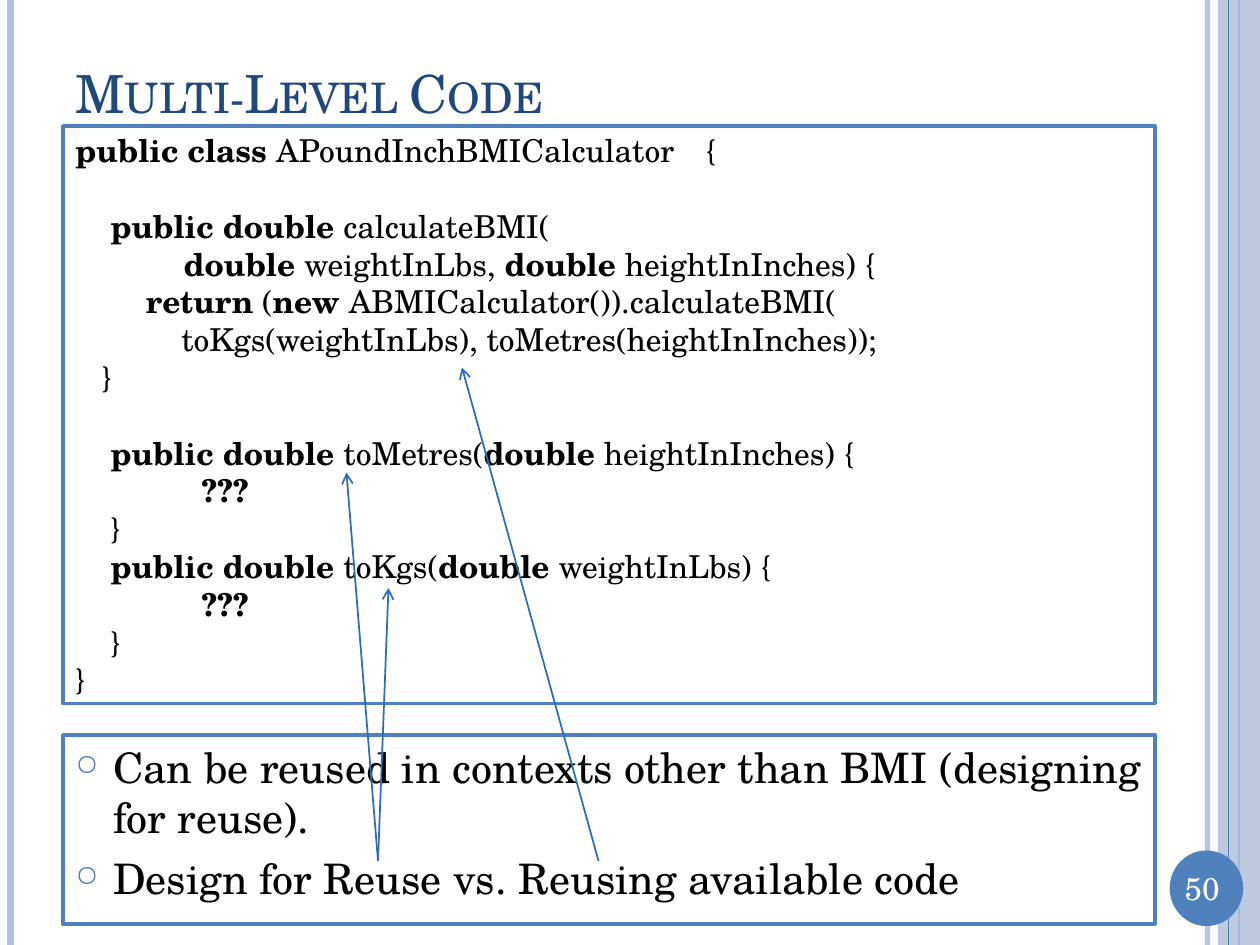
import pptx
import pptx.dml.color
import pptx.enum.shapes
import pptx.enum.text
import pptx.oxml
import pptx.oxml.ns
import pptx.util

COLORS = {
    "white": "FFFFFF", "black": "000000", "title": "1F497D",
    "accent": "4F81BD", "pale": "B3C1DB", "arrow": "2C6CB9",
}
FONT = "TeX Gyre Schola"
NS = pptx.oxml.ns.nsdecls("a")
SHAPE = pptx.enum.shapes.MSO_SHAPE
ANCHOR = pptx.enum.text.MSO_ANCHOR
ALIGN = pptx.enum.text.PP_ALIGN
rgb = pptx.dml.color.RGBColor.from_string

deck = pptx.Presentation()
deck.slide_width = pptx.util.Inches(10)
deck.slide_height = pptx.util.Inches(7.5)
slide = deck.slides.add_slide(deck.slide_layouts[6])
# The grid has 120 columns and 90 rows of square cells
cell = deck.slide_width / 120


def cells(*counts):
    return [round(count * cell) for count in counts]


def write(frame, text, size=18, color="black", align=ALIGN.LEFT, before=0,
          indent=0, hanging=0, bullet=None, tab=None, small_caps=False):
    """Add a paragraph; ** switches bold on and off, indents are in inches."""
    paragraph = frame.paragraphs[0]
    if paragraph.runs:
        paragraph = frame.add_paragraph()
    paragraph.alignment = align
    paragraph.space_before = pptx.util.Pt(before)
    properties = paragraph._p.get_or_add_pPr()
    properties.set("marL", str(pptx.util.Inches(indent)))
    properties.set("indent", str(-pptx.util.Inches(hanging)))
    if bullet:
        for xml in (f'<a:buClr {NS}><a:srgbClr val="{COLORS["accent"]}"/></a:buClr>',
                    f'<a:buSzPct {NS} val="70000"/>',
                    f'<a:buChar {NS} char="{bullet}"/>'):
            properties.append(pptx.oxml.parse_xml(xml))
    if tab:
        properties.append(pptx.oxml.parse_xml(
            f'<a:tabLst {NS}><a:tab pos="{pptx.util.Inches(tab)}" algn="l"/></a:tabLst>'))
    for position, part in enumerate(text.split("**")):
        if part:
            run = paragraph.add_run()
            run.text = part
            run.font.name = FONT
            run.font.size = pptx.util.Pt(size)
            run.font.bold = position % 2 == 1
            run.font.color.rgb = rgb(COLORS[color])
            if small_caps:
                run._r.get_or_add_rPr().set("cap", "small")


# Side decoration and arrows: start, end, colour, width, opacity, arrowhead
stripes = [
    ((115, 0), (115, 90), "pale", 3, 93, False),
    ((1, 0), (1, 90), "pale", 4.5, 100, False),
    ((118, 0), (118, 90), "accent", 1.5, 100, False),
    ((117, 0), (117, 90), "accent", 0.75, 100, False),
]
arrows = [
    ((36, 82), (33, 45), "arrow", 1, 100, True),
    ((36, 82), (37, 56), "arrow", 1, 100, True),
    ((57, 82), (44, 35), "arrow", 1, 100, True),
]
# Filled areas: preset, place in cells, fill, opacity, outlined
areas = {
    "band": (SHAPE.RECTANGLE, (116, 0, 4, 90), "pale", 87, False),
    "badge": (SHAPE.OVAL, (111.4, 81, 7, 7.2), "accent", 100, False),
    "code": (SHAPE.RECTANGLE, (6, 12, 104, 55), "white", 100, True),
    "points": (SHAPE.RECTANGLE, (6, 70, 104, 18), "white", 100, True),
}
labels = {
    "number": ((111, 82.2, 7, 4.8), ANCHOR.TOP),
    "title": ((6, 3.6, 104, 10.4), ANCHOR.MIDDLE),
}

frames = {}
for part in (*stripes[:3], "band", stripes[3], "badge", "number", "title",
             "code", "points", *arrows):
    if part in labels:
        place, anchor = labels[part]
        frames[part] = slide.shapes.add_textbox(*cells(*place)).text_frame
        frames[part].word_wrap = True
        frames[part].vertical_anchor = anchor
    elif part in areas:
        preset, place, color, opacity, outlined = areas[part]
        area = slide.shapes.add_shape(preset, *cells(*place))
        area.shadow.inherit = False
        area.fill.solid()
        area.fill.fore_color.rgb = rgb(COLORS[color])
        if opacity < 100:
            area.fill._xPr.find(".//" + pptx.oxml.ns.qn("a:srgbClr")).append(
                pptx.oxml.parse_xml(f'<a:alpha {NS} val="{opacity * 1000}"/>'))
        if outlined:
            area.line.color.rgb = rgb(COLORS["accent"])
            area.line.width = pptx.util.Pt(2)
        else:
            area.line.fill.background()
        frames[part] = area.text_frame
        frames[part].word_wrap = True
    else:
        start, end, color, width, opacity, pointed = part
        line = slide.shapes.add_connector(
            pptx.enum.shapes.MSO_CONNECTOR.STRAIGHT, *cells(*start, *end))
        line.line.color.rgb = rgb(COLORS[color])
        line.line.width = pptx.util.Pt(width)
        outline = line.line._get_or_add_ln()
        if opacity < 100:
            outline.find(".//" + pptx.oxml.ns.qn("a:srgbClr")).append(
                pptx.oxml.parse_xml(f'<a:alpha {NS} val="{opacity * 1000}"/>'))
        if pointed:
            outline.append(pptx.oxml.parse_xml(f'<a:tailEnd {NS} type="arrow"/>'))
        line._element.spPr.append(pptx.oxml.parse_xml(f"<a:effectLst {NS}/>"))

write(frames["number"], "50", color="white", align=ALIGN.CENTER)
write(frames["title"], "Multi-Level Code", size=30, color="title", small_caps=True)

# Code lines: indent in inches, text, blank lines above
frames["code"].vertical_anchor = ANCHOR.MIDDLE
LINE_PITCH = 21.6
for indent, text, blank_lines in [
    (0, "**public class **APoundInchBMICalculator\t{", 0),
    (0.28, "**public double **calculateBMI(", 1),
    (0.86, "**double **weightInLbs, **double **heightInInches) {", 0),
    (0.56, "**return** (**new **ABMICalculator()).calculateBMI(", 0),
    (0.84, "toKgs(weightInLbs), toMetres(heightInInches));", 0),
    (0.21, "}", 0),
    (0.28, "**public double **toMetres(**double **heightInInches) {", 1),
    (1, "**???**", 0),
    (0.28, "}", 0),
    (0.28, "**public double **toKgs(**double **weightInLbs) {", 0),
    (1, "**???**", 0),
    (0.28, "}", 0),
    (0, "}", 0),
]:
    write(frames["code"], text, indent=indent, before=blank_lines * LINE_PITCH,
          tab=4.95 if "\t" in text else None)

frames["points"].vertical_anchor = ANCHOR.TOP
for point in ("Can be reused in contexts other than BMI (designing for reuse).",
              "Design for Reuse vs. Reusing available code"):
    write(frames["points"], point, size=24, before=6, indent=0.3, hanging=0.3,
          bullet="○")

deck.save("out.pptx")
